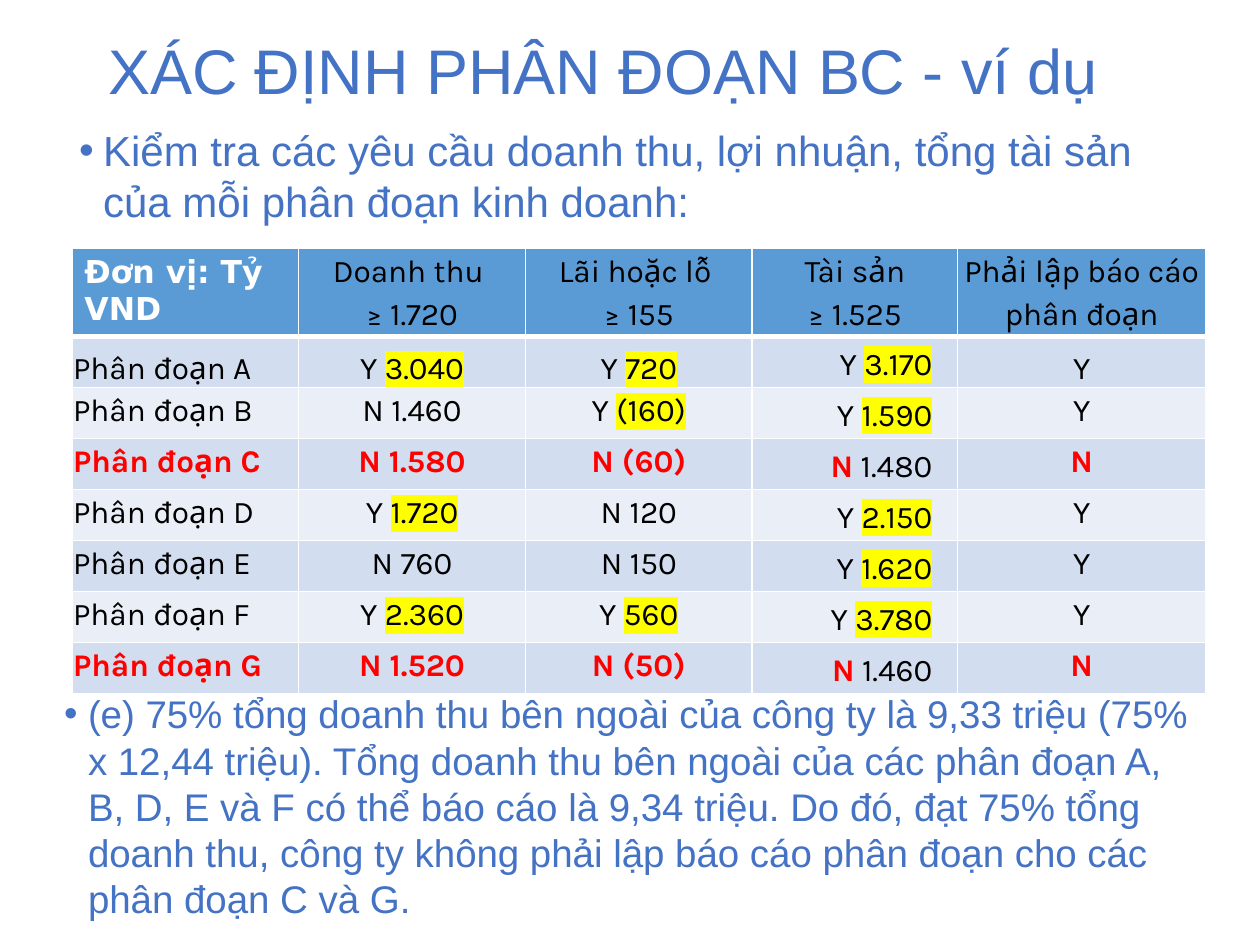
from dataclasses import dataclass

from lxml import etree
from pptx import Presentation
from pptx.dml.color import RGBColor
from pptx.enum import text
from pptx.oxml import ns
from pptx.util import Inches, Pt

TITLE = "XÁC ĐỊNH PHÂN ĐOẠN BC - ví dụ"
INTRO = "Kiểm tra các yêu cầu doanh thu, lợi nhuận, tổng tài sản của mỗi phân đoạn kinh doanh:"
CONCLUSION = (
    "(e) 75% tổng doanh thu bên ngoài của công ty là 9,33 triệu (75% x 12,44 triệu). "
    "Tổng doanh thu bên ngoài của các phân đoạn A, B, D, E và F có thể báo cáo là 9,34 triệu. "
    "Do đó, đạt 75% tổng doanh thu, công ty không phải lập báo cáo phân đoạn cho các phân đoạn C và G."
)
HEADERS = [
    "Đơn vị: Tỷ VND",
    "Doanh thu \n≥ 1.720",
    "Lãi hoặc lỗ \n≥ 155",
    "Tài sản\n≥ 1.525",
    "Phải lập báo cáo phân đoạn",
]
SEGMENTS = [
    ("Phân đoạn A", "Y 3.040", "Y 720", "Y 3.170", "Y"),
    ("Phân đoạn B", "N 1.460", "Y (160)", "Y 1.590", "Y"),
    ("Phân đoạn C", "N 1.580", "N (60)", "N 1.480", "N"),
    ("Phân đoạn D", "Y 1.720", "N 120", "Y 2.150", "Y"),
    ("Phân đoạn E", "N 760", "N 150", "Y 1.620", "Y"),
    ("Phân đoạn F", "Y 2.360", "Y 560", "Y 3.780", "Y"),
    ("Phân đoạn G", "N 1.520", "N (50)", "N 1.460", "N"),
]
COLUMN_WIDTHS = [1.8, 1.8, 1.8, 1.63, 1.97]
TABLE_LEFT, TABLE_TOP, TABLE_HEIGHT = 0.57, 1.97, 3.24
ASSETS = 3


@dataclass(frozen=True)
class Theme:
    heading: str = "4472C4"
    header_fill: str = "5B9BD5"
    bands: tuple = ("D2DEEF", "EAEFF7")
    white: str = "FFFFFF"
    black: str = "000000"
    red: str = "FF0000"
    marker: str = "FFFF00"
    heading_font: str = "Arial"
    unit_font: str = "DejaVu Sans"
    table_font: str = "Karla"
    title_size: int = 36
    intro_size: int = 24
    conclusion_size: int = 22
    table_size: int = 18


THEME = Theme()


def format_run(run, font, size, color, bold=False):
    run.font.name, run.font.size, run.font.bold = font, Pt(size), bold
    run.font.color.rgb = RGBColor.from_string(color)


def highlight(run):
    mark = etree.Element(ns.qn("a:highlight"))
    etree.SubElement(mark, ns.qn("a:srgbClr"), val=THEME.marker)
    run.font._element.find(ns.qn("a:latin")).addprevious(mark)


def add_text(slide, box, content, size, bullet=False):
    text_frame = slide.shapes.add_textbox(*map(Inches, box)).text_frame
    text_frame.word_wrap = True
    text_frame.text = content
    paragraph = text_frame.paragraphs[0]
    format_run(paragraph.runs[0], THEME.heading_font, size, THEME.heading)
    if bullet:
        properties = paragraph._p.get_or_add_pPr()
        properties.set("marL", str(Inches(0.19)))
        properties.set("indent", str(-Inches(0.19)))
        etree.SubElement(properties, ns.qn("a:buFont"), typeface=THEME.heading_font)
        etree.SubElement(properties, ns.qn("a:buChar"), char="•")
    return text_frame


def style_cell(cell, fill, top=1, bottom=1):
    properties = cell._tc.get_or_add_tcPr()
    for side, width in (("L", 1), ("R", 1), ("T", top), ("B", bottom)):
        line = etree.SubElement(properties, ns.qn(f"a:ln{side}"), w=str(Pt(width)))
        solid = etree.SubElement(line, ns.qn("a:solidFill"))
        etree.SubElement(solid, ns.qn("a:srgbClr"), val=THEME.white)
    cell.fill.solid()
    cell.fill.fore_color.rgb = RGBColor.from_string(fill)


def set_tight(cell, alignment):
    cell.margin_left = cell.margin_right = Inches(0.01)
    cell.margin_top = cell.margin_bottom = 0
    for paragraph in cell.text_frame.paragraphs:
        paragraph.alignment = alignment
        paragraph.line_spacing = 1.15


def fill_header(cell, column, content):
    cell.text_frame.text = content
    style_cell(cell, THEME.header_fill, bottom=3)
    if column:
        set_tight(cell, text.PP_ALIGN.CENTER)
    font, color = (THEME.table_font, THEME.black) if column else (THEME.unit_font, THEME.white)
    for paragraph in cell.text_frame.paragraphs:
        format_run(paragraph.runs[0], font, THEME.table_size, color, bold=not column)


def fill_body(cell, row, column, content, reportable):
    paragraph = cell.text_frame.paragraphs[0]
    answer, space, value = content.partition(" ") if column else (content, "", "")
    meets_test = answer == "Y"
    parts = [answer + space, value] if meets_test else [answer, space + value]
    for index, part in enumerate(filter(None, parts)):
        run = paragraph.add_run()
        run.text = part
        failed = not reportable and not (column == ASSETS and index)
        color = THEME.red if failed else THEME.black
        format_run(run, THEME.table_font, THEME.table_size, color, failed)
        if meets_test and index:
            highlight(run)
    style_cell(cell, THEME.bands[(row - 1) % 2], top=3 if row == 1 else 1)
    alignments = {0: text.PP_ALIGN.JUSTIFY, ASSETS: text.PP_ALIGN.RIGHT}
    set_tight(cell, alignments.get(column, text.PP_ALIGN.CENTER))
    if column == ASSETS:
        cell.margin_right = Inches(0.2)
        cell.vertical_anchor = text.MSO_ANCHOR.MIDDLE
    elif row == 1:
        cell.vertical_anchor = text.MSO_ANCHOR.BOTTOM


def add_segment_table(slide):
    row_count = len(SEGMENTS) + 1
    box = map(Inches, (TABLE_LEFT, TABLE_TOP, sum(COLUMN_WIDTHS), TABLE_HEIGHT))
    table = slide.shapes.add_table(row_count, len(HEADERS), *box).table
    for column, width in zip(table.columns, COLUMN_WIDTHS):
        column.width = Inches(width)
    for column, content in enumerate(HEADERS):
        fill_header(table.cell(0, column), column, content)
    for row, segment in enumerate(SEGMENTS, 1):
        for column, content in enumerate(segment):
            fill_body(table.cell(row, column), row, column, content, segment[-1] == "Y")


def main():
    """Build the reportable-segment example slide."""
    presentation = Presentation()
    presentation.slide_width, presentation.slide_height = Inches(10), Inches(7.5)
    slide = presentation.slides.add_slide(presentation.slide_layouts[6])
    title = add_text(slide, (0.76, 0.04, 8.62, 1.1), TITLE, THEME.title_size)
    title.vertical_anchor = text.MSO_ANCHOR.MIDDLE
    title.paragraphs[0].line_spacing = 0.9
    add_segment_table(slide)
    add_text(slide, (0.53, 0.94, 9, 0.91), INTRO, THEME.intro_size, bullet=True)
    add_text(slide, (0.41, 5.43, 9.15, 1.95), CONCLUSION, THEME.conclusion_size, bullet=True)
    presentation.save("out.pptx")


if __name__ == "__main__":
    main()
